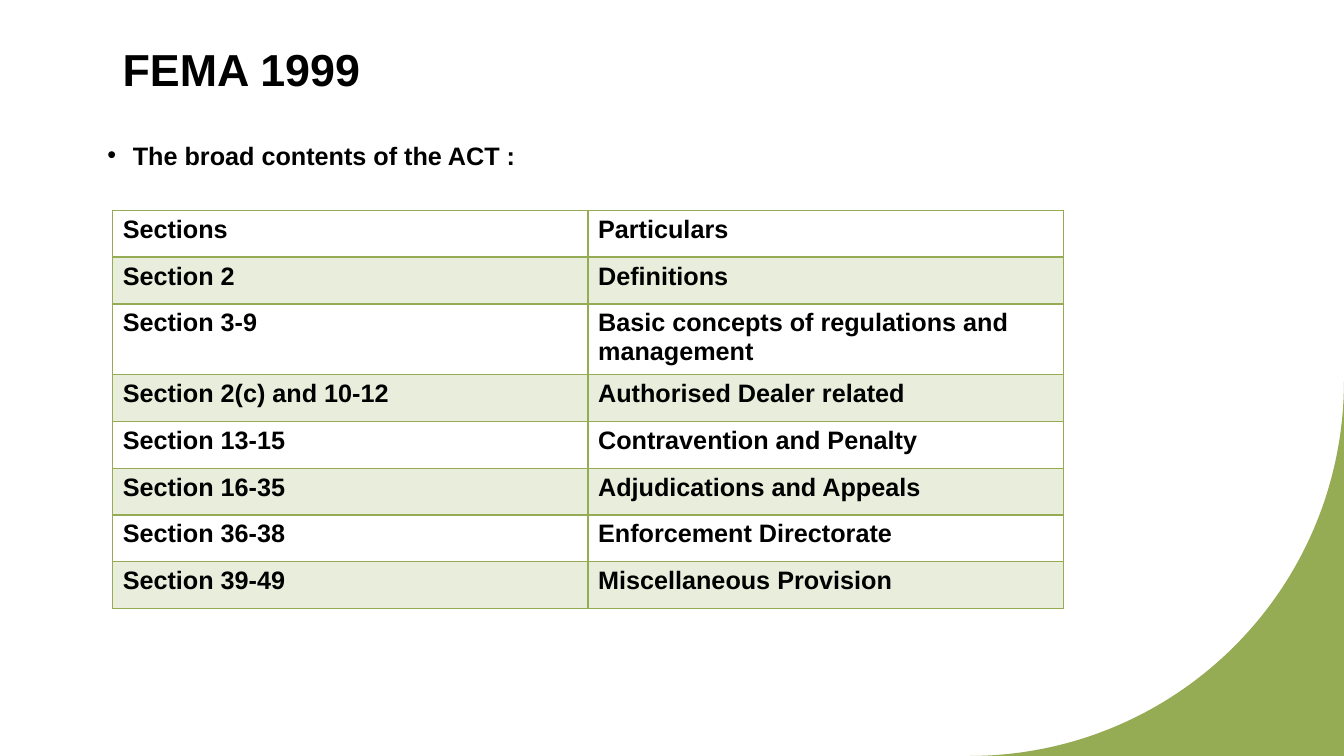
from math import cos, pi, sin

from lxml.etree import SubElement
from pptx import Presentation
from pptx.dml.color import RGBColor
from pptx.enum.text import MSO_ANCHOR as Anchor
from pptx.oxml.ns import qn
from pptx.util import Cm, Pt

GREEN = RGBColor(0x95, 0xAB, 0x54)
BLACK = RGBColor(0x00, 0x00, 0x00)
WHITE = RGBColor(0xFF, 0xFF, 0xFF)

PAGE_WIDTH, PAGE_HEIGHT = 33.87, 19.05

CONTENTS = [
    ("Sections", "Particulars"),
    ("Section 2", "Definitions"),
    ("Section 3-9", "Basic concepts of regulations and management"),
    ("Section 2(c) and 10-12", "Authorised Dealer related"),
    ("Section 13-15", "Contravention and Penalty"),
    ("Section 16-35", "Adjudications and Appeals"),
    ("Section 36-38", "Enforcement Directorate"),
    ("Section 39-49", "Miscellaneous Provision"),
]


class SlideBuilder:
    font = "Arial"
    body_size = 18

    def __init__(self, page):
        self.page = page
        page.background.fill.solid()
        page.background.fill.fore_color.rgb = WHITE

    def add_span(self, para, text, size=body_size):
        span = para.add_run()
        span.text = text
        span.font.name = self.font
        span.font.size = Pt(size)
        span.font.bold = True
        span.font.color.rgb = BLACK

    def text_box(self, left, top, width, height, text, size=body_size,
                 spacing=1.0, anchor=Anchor.TOP):
        """Add a one-paragraph text box and return its paragraph."""
        box = self.page.shapes.add_textbox(Cm(left), Cm(top), Cm(width), Cm(height))
        frame = box.text_frame
        frame.word_wrap = True
        frame.vertical_anchor = anchor
        para = frame.paragraphs[0]
        para.line_spacing = spacing
        self.add_span(para, text, size)
        return para

    def bullet(self, para, indent):
        """Give the paragraph a hanging bullet."""
        properties = para._p.get_or_add_pPr()
        properties.set("marL", str(Cm(indent)))
        properties.set("indent", str(-Cm(indent)))
        SubElement(properties, qn("a:buFont")).set("typeface", self.font)
        SubElement(properties, qn("a:buChar")).set("char", "•")

    def corner(self, radius, steps=90):
        """Fill the bottom right corner outside a quarter circle."""
        center_x, center_y = PAGE_WIDTH - radius, PAGE_HEIGHT - radius
        angles = [pi / 2 * step / steps for step in range(steps + 1)]
        arc = [(Cm(center_x + radius * cos(angle)), Cm(center_y + radius * sin(angle)))
               for angle in angles]
        outline = self.page.shapes.build_freeform(Cm(PAGE_WIDTH), Cm(PAGE_HEIGHT))
        outline.add_line_segments(arc)
        shape = outline.convert_to_shape()
        shape.shadow.inherit = False
        shape.fill.solid()
        shape.fill.fore_color.rgb = GREEN
        shape.line.fill.background()

    def cell_borders(self, cell, widths):
        properties = cell._tc.get_or_add_tcPr()
        for position, (side, width) in enumerate(widths.items()):
            line = properties.makeelement(qn(f"a:ln{side}"), {"w": str(Pt(width))})
            solid = SubElement(line, qn("a:solidFill"))
            SubElement(solid, qn("a:srgbClr")).set("val", str(GREEN))
            properties.insert(position, line)

    def tint(self, cell, opacity):
        """Fill the cell with see-through green."""
        cell.fill.solid()
        cell.fill.fore_color.rgb = GREEN
        color = cell._tc.tcPr.find(f"{qn('a:solidFill')}/{qn('a:srgbClr')}")
        SubElement(color, qn("a:alpha")).set("val", str(opacity * 1000))

    def table(self, left, top, width, row_height, rows):
        table = self.page.shapes.add_table(
            len(rows), len(rows[0]), Cm(left), Cm(top), Cm(width),
            Cm(row_height * len(rows))).table
        for row_index, texts in enumerate(rows):
            table.rows[row_index].height = Cm(row_height)
            top_width = 2 if row_index == 1 else 1
            bottom_width = 2 if row_index == 0 else 1
            for column_index, text in enumerate(texts):
                cell = table.cell(row_index, column_index)
                self.add_span(cell.text_frame.paragraphs[0], text)
                if row_index % 2:
                    self.tint(cell, 20)
                else:
                    cell.fill.background()
                self.cell_borders(cell, {"L": 1, "R": 1, "T": top_width, "B": bottom_width})


def main():
    deck = Presentation()
    deck.slide_width, deck.slide_height = Cm(PAGE_WIDTH), Cm(PAGE_HEIGHT)
    slide = SlideBuilder(deck.slides.add_slide(deck.slide_layouts[6]))

    slide.corner(9.43)
    slide.text_box(2.84, -1.65, 27.64, 4.19, "FEMA 1999", 32, 1.1, Anchor.BOTTOM)
    intro = slide.text_box(2.46, 3.25, 27.64, 11.73, "The broad contents of the ACT :",
                           spacing=1.2)
    intro.space_before = Pt(10)
    slide.bullet(intro, 0.64)
    slide.table(2.84, 5.3, 23.96, 1.18, CONTENTS)

    deck.save("out.pptx")


if __name__ == "__main__":
    main()
